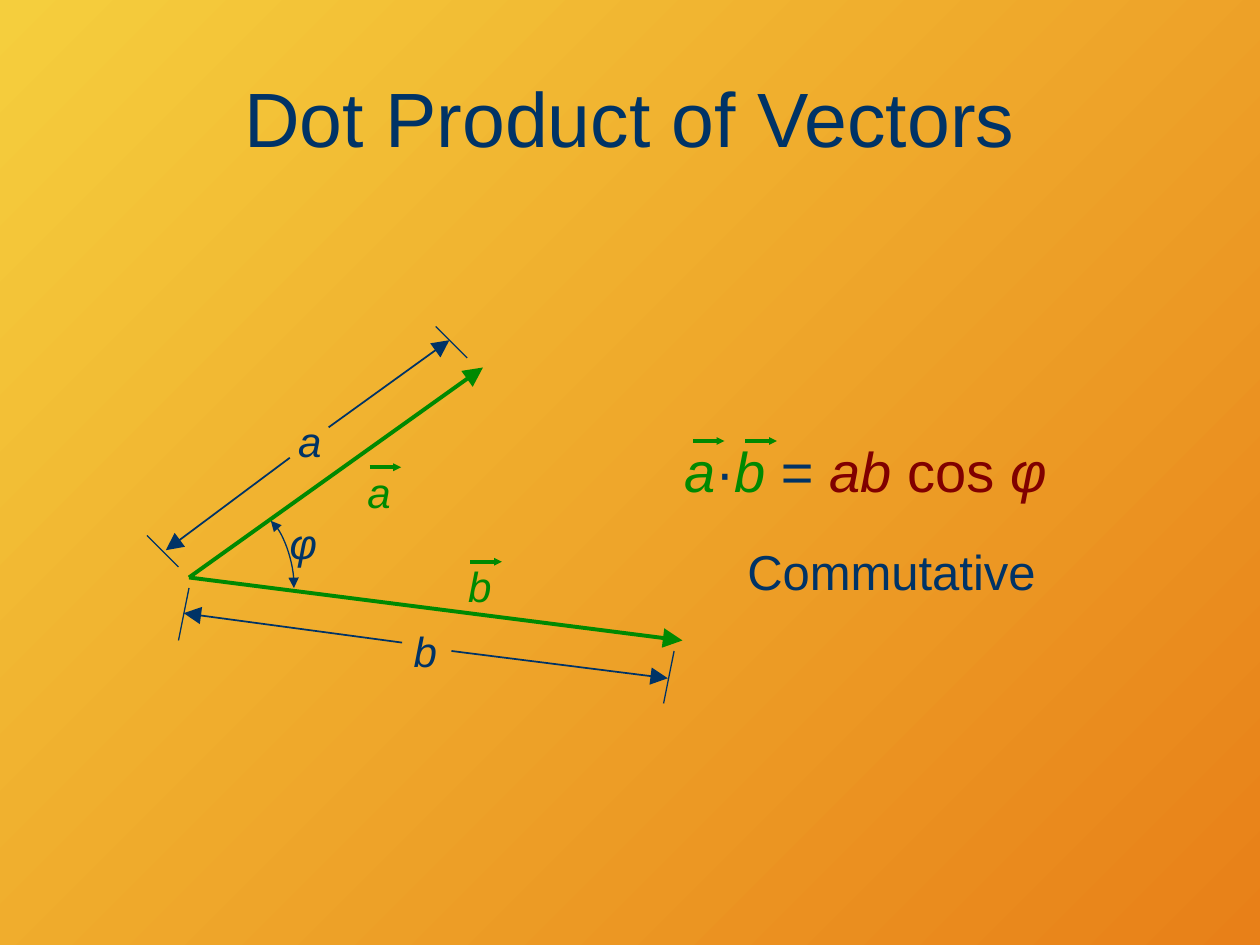
"""Build the slide on the dot product of two vectors, on a grid of 120 columns by 90 rows."""
import lxml.etree
import pptx
import pptx.dml.color
import pptx.enum.shapes
import pptx.enum.text
import pptx.oxml.ns
import pptx.util

NAVY, GREEN, MAROON = "003366", "008901", "800000"
CELL = pptx.util.Inches(1) / 12
qn = pptx.oxml.ns.qn
align = pptx.enum.text.PP_ALIGN
anchor = pptx.enum.text.MSO_ANCHOR


def color(value):
    return pptx.dml.color.RGBColor.from_string(value)


def style_line(shape, tone, width, heads, size):
    shape.line.color.rgb = color(tone)
    shape.line.width = pptx.util.Pt(width)
    outline = shape.line._get_or_add_ln()
    for head in heads:
        lxml.etree.SubElement(outline, qn("a:" + head), type="triangle", w=size, len=size)
    if shape._element.spPr.find(qn("a:effectLst")) is None:
        lxml.etree.SubElement(shape._element.spPr, qn("a:effectLst"))


deck = pptx.Presentation()
deck.slide_width, deck.slide_height = round(120 * CELL), round(90 * CELL)
page = deck.slides.add_slide(deck.slide_layouts[6])

backdrop = page.background.fill
backdrop.gradient()
backdrop.gradient_angle = 315
for stop, position, tone in zip(backdrop.gradient_stops, (0, 1), ("F5CE3D", "E88018")):
    stop.position = position
    stop.color.rgb = color(tone)

vector_labels = [("a", 33.6, 43.8), ("b", 43.2, 52.8)]
length_labels = [("a", 27, 39), ("b", 38, 59), ("φ", 26.4, 48.7)]
formula = [("a", GREEN, True), ("·", NAVY, False), ("b", GREEN, True), (" = ", NAVY, False),
           ("ab", MAROON, True), (" cos ", MAROON, False), ("φ", MAROON, True)]

texts = [
    ((6, 3.6, 108, 15), 44, [("Dot Product of Vectors", NAVY, False)],
     align.CENTER, anchor.MIDDLE, True),
    ((64, 41, 51, 9), 32, formula, align.LEFT, anchor.TOP, True),
    ((70, 51, 30, 6.8), 28, [("Commutative", NAVY, False)], align.LEFT, anchor.TOP, False),
]
for labels, tone in ((vector_labels, GREEN), (length_labels, NAVY)):
    for letter, left, top in labels:
        texts.append(((left, top, 5, 6), 24, [(letter, tone, True)],
                      align.CENTER, anchor.TOP, True))

for area, size, spans, alignment, vertical, wrap in texts:
    box = page.shapes.add_textbox(*(round(n * CELL) for n in area))
    for name, value in {"word_wrap": wrap, "vertical_anchor": vertical}.items():
        setattr(box.text_frame, name, value)
    para = box.text_frame.paragraphs[0]
    para.alignment = alignment
    for words, tone, italic in spans:
        span = para.add_run()
        span.text = words
        span.font.color.rgb = color(tone)
        format_values = {"name": "Arial", "size": pptx.util.Pt(size), "italic": italic}
        for name, value in format_values.items():
            setattr(span.font, name, value)

vectors = [(18, 55, 46, 35), (18, 55, 65, 61)]
over_arrows = [(66, 42, 69, 42), (71, 42, 74, 42)]
for letter, left, top in vector_labels:
    over_arrows.append((left + 1.6, top + 0.7, left + 4.6, top + 0.7))
end_ticks = [(18, 56, 17, 61), (64.2, 62, 63.2, 67),
             (17, 54, 14, 51), (44.5, 34.1, 41.5, 31.1)]
dimensions = [(43, 62, 63.6, 64.6), (38.3, 61.2, 17.5, 58.4),
              (27.6, 43.6, 15.8, 52.4), (31.3, 40.7, 42.8, 32.4)]

line_groups = [
    (vectors, GREEN, 2.25, ["tailEnd"], "lg"),
    (over_arrows, GREEN, 2.25, ["tailEnd"], "sm"),
    (end_ticks, NAVY, 0.75, [], "med"),
    (dimensions, NAVY, 1, ["tailEnd"], "lg"),
]
for lines, *look in line_groups:
    for ends in lines:
        line = page.shapes.add_connector(
            pptx.enum.shapes.MSO_CONNECTOR.STRAIGHT, *(round(n * CELL) for n in ends))
        style_line(line, *look)

controls = [(25.8, 49.6), (26.9, 50.4), (28.1, 53.6), (28, 56)]
arc_points = []
for step in range(17):
    t = step / 16
    weights = ((1 - t) ** 3, 3 * t * (1 - t) ** 2, 3 * t ** 2 * (1 - t), t ** 3)
    arc_points.append(tuple(
        round(CELL * sum(w * point[axis] for w, point in zip(weights, controls)))
        for axis in (0, 1)))
builder = page.shapes.build_freeform(*arc_points[0])
builder.add_line_segments(arc_points[1:], close=False)
angle_arc = builder.convert_to_shape()
angle_arc.shadow.inherit = False
angle_arc.fill.background()
style_line(angle_arc, NAVY, 0.75, ["headEnd", "tailEnd"], "med")

deck.save("out.pptx")
